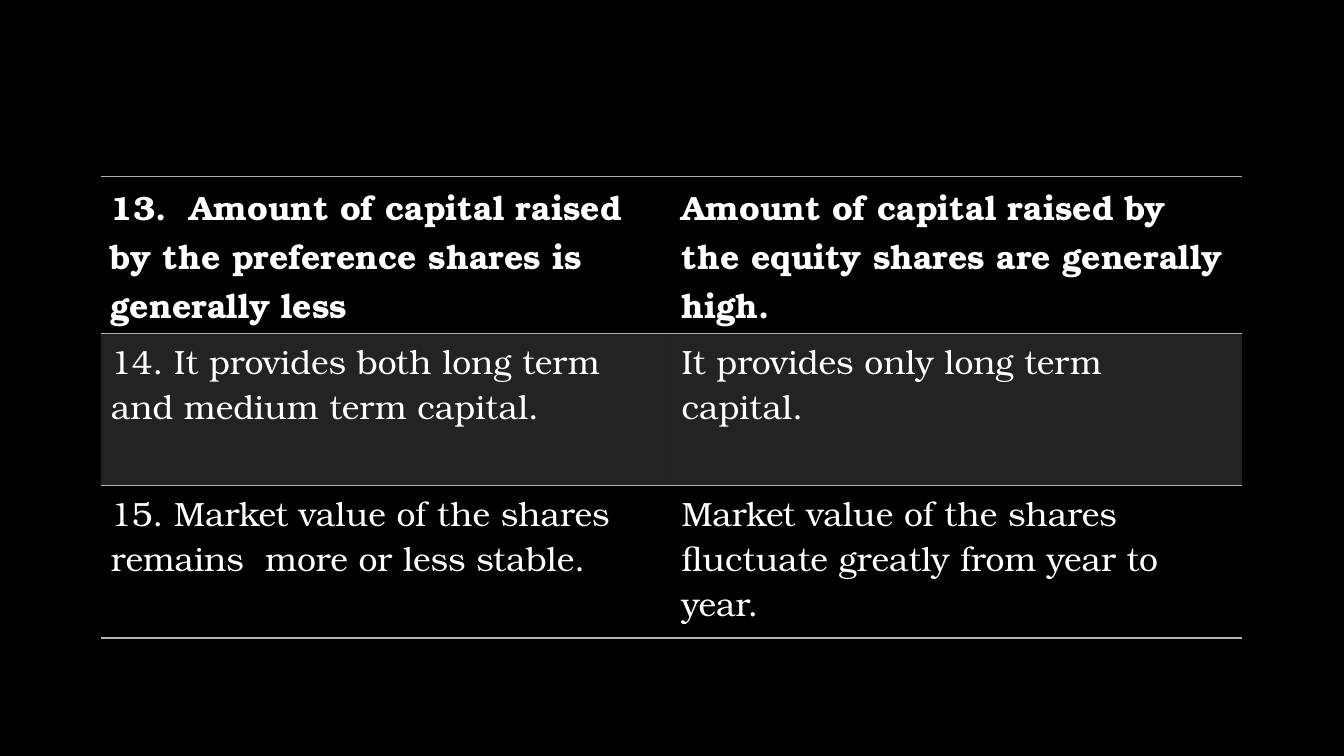
from lxml import etree
from pptx import Presentation
from pptx.dml.color import RGBColor
from pptx.oxml import ns
from pptx.util import Inches, Pt

BLACK = RGBColor(0x00, 0x00, 0x00)
WHITE = RGBColor(0xFF, 0xFF, 0xFF)
GREY = RGBColor(0xB2, 0xB2, 0xB2)
FONT = "TeX Gyre Bonum"
PLAIN = "{2D5ABB26-0587-4C30-8999-92F81FD0307C}"

ROWS = [
    ("13.  Amount of capital raised by the preference shares is generally less",
     "Amount of capital raised by the equity shares are generally high."),
    ("14. It provides both long term and medium term capital.",
     "It provides only long term capital."),
    ("15. Market value of the shares remains  more or less stable.",
     "Market value of the shares fluctuate greatly from year to year."),
]
# Borders of each row, in schema order
EDGES = [("lnT", "lnB"), ("lnT",), ("lnB",)]


def rule(cell, edge, spot):
    """Draw one grey border of a cell."""
    line = etree.Element(ns.qn("a:" + edge), w=str(Pt(1)))
    fill = etree.SubElement(line, ns.qn("a:solidFill"))
    etree.SubElement(fill, ns.qn("a:srgbClr"), val=str(GREY))
    cell._tc.get_or_add_tcPr().insert(spot, line)


# Slide with black background
prs = Presentation()
prs.slide_width, prs.slide_height = Inches(13.33), Inches(7.5)
slide = prs.slides.add_slide(prs.slide_layouts[6])
slide.background.fill.solid()
slide.background.fill.fore_color.rgb = BLACK

# Comparison table
frame = slide.shapes.add_table(len(ROWS), 2, Inches(1), Inches(1.75),
                               Inches(11.32), Inches(4.53))
table = frame.table
table.horz_banding = False
table._tbl.tblPr.find(ns.qn("a:tableStyleId")).text = PLAIN
for row in table.rows:
    row.height = Inches(1.51)

for r, pair in enumerate(ROWS):
    for c, words in enumerate(pair):
        cell = table.cell(r, c)
        run = cell.text_frame.paragraphs[0].add_run()
        run.text = words
        run.font.name = FONT
        run.font.size = Pt(24)
        run.font.bold = r == 0
        run.font.color.rgb = WHITE

        # Translucent band on the middle row
        if r == 1:
            cell.fill.solid()
            cell.fill.fore_color.rgb = GREY
            tint = cell._tc.tcPr.find(".//" + ns.qn("a:srgbClr"))
            etree.SubElement(tint, ns.qn("a:alpha"), val="20000")
        else:
            cell.fill.background()

        for spot, edge in enumerate(EDGES[r]):
            rule(cell, edge, spot)

prs.save("out.pptx")
